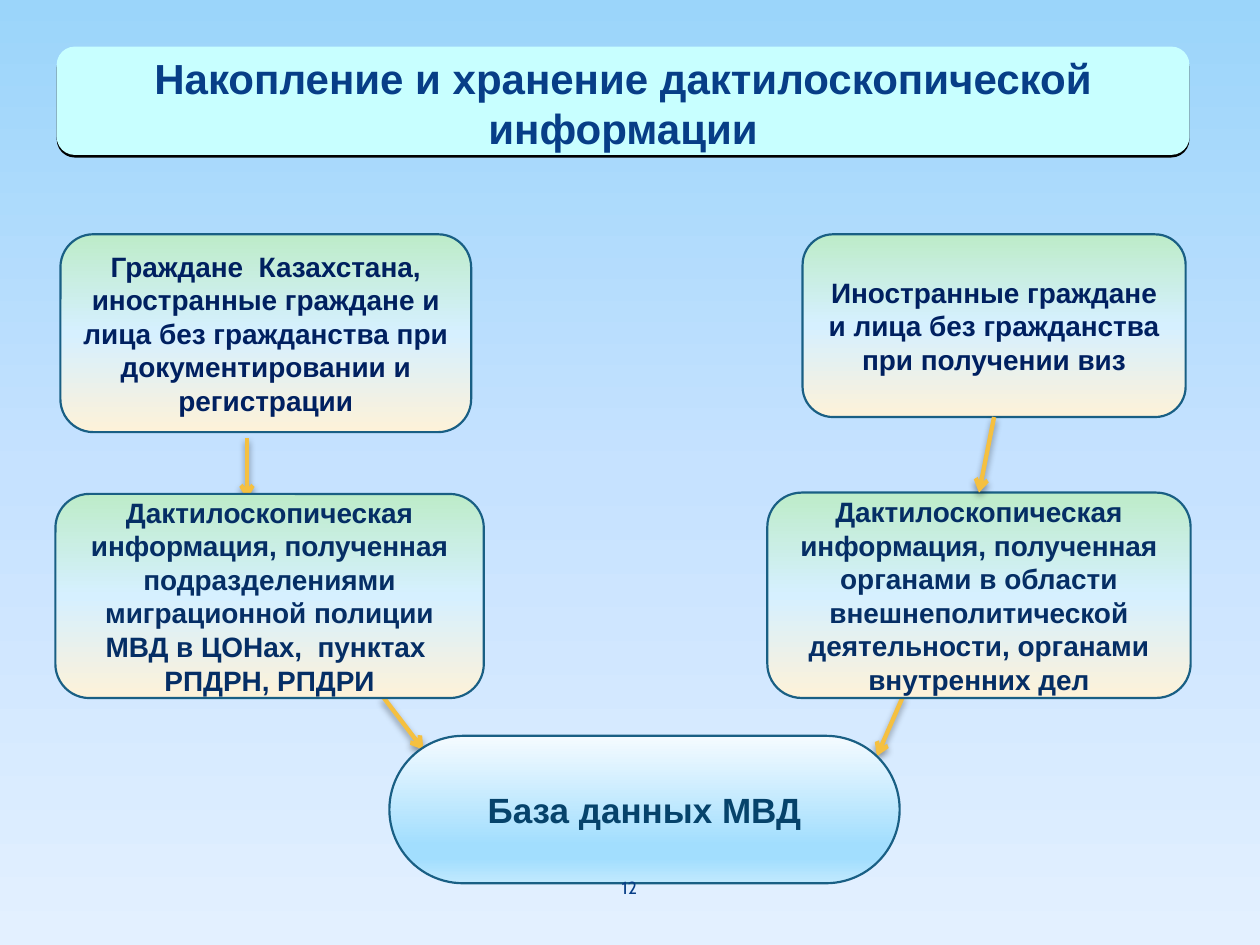
from lxml import etree
from pptx import Presentation
from pptx.dml.color import RGBColor
from pptx.enum.shapes import MSO_CONNECTOR, MSO_SHAPE
from pptx.enum.text import MSO_ANCHOR, PP_ALIGN
from pptx.oxml.ns import qn
from pptx.util import Inches, Pt

ROUNDED = MSO_SHAPE.ROUNDED_RECTANGLE
STRAIGHT = MSO_CONNECTOR.STRAIGHT
MIDDLE = MSO_ANCHOR.MIDDLE
CENTER = PP_ALIGN.CENTER
BOTTOM_SIDE, TOP_SIDE = 2, 0
WIDTH, HEIGHT = 10, 7.5

COLORS = {
    "title_fill": "C8FFFF", "title_text": "073E87", "source_text": "002060",
    "agency_text": "052E65", "base_text": "06436B",
    "outline": "195F84", "arrow": "F5C040", "shadow": "000000",
}
# Gradient stops from top to bottom: position in percent, colour
GRADIENTS = {
    "background": [(0, "9BD5FA"), (50, "C6E2FF"), (100, "E3F0FF")],
    "box": [(0, "BDECC9"), (50, "D6F0FF"), (100, "FDF2D9")],
    "base": [(0, "F5FBFF"), (74, "A2DEFE"), (83, "A2DEFE"), (100, "C1E9FE")],
}

# Content: text and left, top, width, height in inches
TITLE = ("Накопление и хранение дактилоскопической информации",
         (0.45, 0.37, 8.99, 0.86))
BOXES = {
    "residents": ("Граждане  Казахстана, иностранные граждане и лица без "
                  "гражданства при документировании и регистрации",
                  (0.48, 1.86, 3.26, 1.57), "source_text"),
    "visas": ("Иностранные граждане и лица без гражданства при получении виз",
              (6.37, 1.86, 3.04, 1.45), "source_text"),
    "police": ("Дактилоскопическая информация, полученная подразделениями "
               "миграционной полиции МВД в ЦОНах,  пунктах  РПДРН, РПДРИ",
               (0.44, 3.92, 3.4, 1.62), "agency_text"),
    "foreign_affairs": ("Дактилоскопическая информация, полученная органами в "
                        "области внешнеполитической деятельности, органами "
                        "внутренних дел",
                        (6.09, 3.91, 3.36, 1.63), "agency_text"),
}
BASE = ("База данных МВД", (3.09, 5.84, 4.05, 1.17))
LOOSE_ARROWS = [(1.96, 3.48, 1.96, 3.96), (3.04, 5.53, 3.36, 5.95),
                (7.17, 5.52, 6.96, 6.0)]
PAGE_NUMBER = ("12", (4.36, 6.84, 1.27, 0.4))


def color(name):
    return RGBColor.from_string(COLORS[name])


def set_gradient(fill, element, name):
    fill.gradient()
    fill.gradient_angle = 270
    stops = next(element.iter(qn("a:gsLst")))
    for stop in list(stops):
        stops.remove(stop)
    for position, value in GRADIENTS[name]:
        stop = etree.SubElement(stops, qn("a:gs"), pos=str(position * 1000))
        etree.SubElement(stop, qn("a:srgbClr"), val=value)


def set_shadow(shape, blur, distance, opacity):
    properties = shape._element.spPr
    for old in properties.findall(qn("a:effectLst")):
        properties.remove(old)
    effects = etree.SubElement(properties, qn("a:effectLst"))
    shadow = etree.SubElement(effects, qn("a:outerShdw"), blurRad=str(Pt(blur)),
                              dist=str(Pt(distance)), dir="5400000", rotWithShape="0")
    shade = etree.SubElement(shadow, qn("a:srgbClr"), val=COLORS["shadow"])
    etree.SubElement(shade, qn("a:alpha"), val=str(opacity * 1000))


def write(shape, text, size, color_name, bold=True, font="Arial"):
    frame = shape.text_frame
    frame.word_wrap = True
    frame.vertical_anchor = MIDDLE
    frame.text = text
    paragraph = frame.paragraphs[0]
    paragraph.alignment = CENTER
    run_font = paragraph.runs[0].font
    run_font.name, run_font.size, run_font.bold = font, Pt(size), bold
    run_font.color.rgb = color(color_name)


def add_box(slide, place, gradient):
    shape = slide.shapes.add_shape(ROUNDED, *map(Inches, place))
    shape.shadow.inherit = False
    set_gradient(shape.fill, shape._element, gradient)
    shape.line.color.rgb = color("outline")
    shape.line.width = Pt(1.25)
    return shape


def add_arrow(slide, ends):
    arrow = slide.shapes.add_connector(STRAIGHT, *map(Inches, ends))
    arrow.line.color.rgb = color("arrow")
    arrow.line.width = Pt(2.5)
    line = arrow._element.spPr.find(qn("a:ln"))
    etree.SubElement(line, qn("a:tailEnd"), type="arrow")
    set_shadow(arrow, blur=4, distance=2, opacity=38)
    return arrow


def main():
    presentation = Presentation()
    presentation.slide_width, presentation.slide_height = Inches(WIDTH), Inches(HEIGHT)
    slide = presentation.slides.add_slide(presentation.slide_layouts[6])
    set_gradient(slide.background.fill, slide._element, "background")

    # Arrows that run behind the boxes
    for ends in LOOSE_ARROWS:
        add_arrow(slide, ends)

    # Database at the bottom
    text, place = BASE
    base = add_box(slide, place, "base")
    base.adjustments[0] = 0.5
    write(base, text, 20, "base_text")

    # Sources and the agencies below them
    boxes = {}
    for name, (text, place, text_color) in BOXES.items():
        boxes[name] = add_box(slide, place, "box")
        write(boxes[name], text, 16, text_color)

    # Arrow joined to both boxes on the right
    joined = add_arrow(slide, (0, 0, 1, 1))
    joined.begin_connect(boxes["visas"], BOTTOM_SIDE)
    joined.end_connect(boxes["foreign_affairs"], TOP_SIDE)

    # Title
    text, place = TITLE
    title = slide.shapes.add_shape(ROUNDED, *map(Inches, place))
    title.fill.solid()
    title.fill.fore_color.rgb = color("title_fill")
    title.line.fill.background()
    set_shadow(title, blur=0, distance=1.5, opacity=100)
    write(title, text, 24, "title_text")
    title.text_frame.margin_top = Inches(0.08)

    # Page number
    text, place = PAGE_NUMBER
    number = slide.shapes.add_textbox(*map(Inches, place))
    write(number, text, 10, "title_text", bold=False, font="Cabin")

    presentation.save("out.pptx")


if __name__ == "__main__":
    main()
